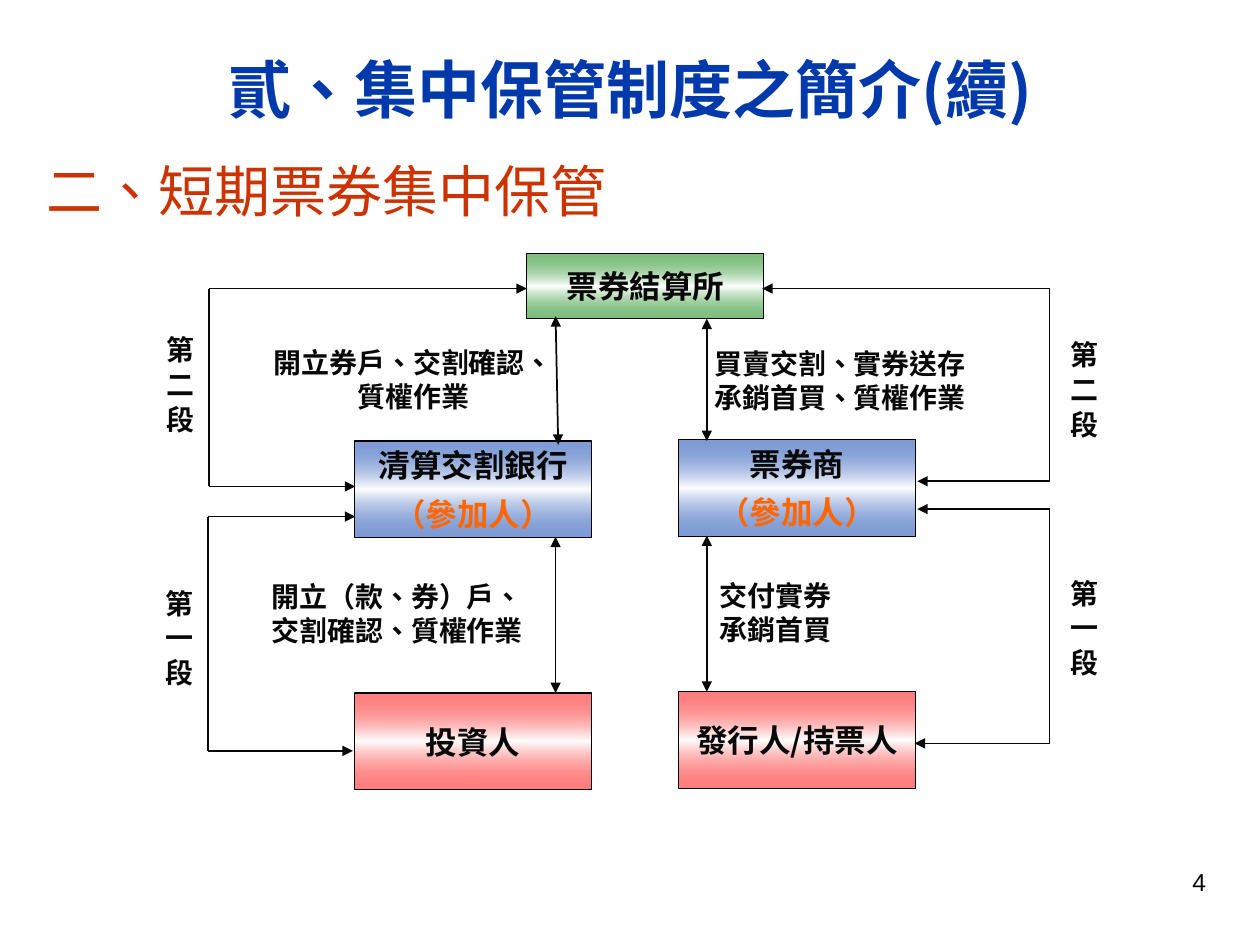
from lxml import etree
from pptx import Presentation
from pptx.dml.color import RGBColor
from pptx.enum.lang import MSO_LANGUAGE_ID
from pptx.enum.shapes import MSO_CONNECTOR, MSO_SHAPE
from pptx.enum.text import MSO_ANCHOR, PP_ALIGN
from pptx.oxml.ns import qn
from pptx.util import Pt

STRAIGHT, RECT = MSO_CONNECTOR.STRAIGHT, MSO_SHAPE.RECTANGLE
TOP, MIDDLE = MSO_ANCHOR.TOP, MSO_ANCHOR.MIDDLE
LEFT, CENTER, RIGHT = PP_ALIGN.LEFT, PP_ALIGN.CENTER, PP_ALIGN.RIGHT
JUSTIFY = PP_ALIGN.JUSTIFY
CHINESE = MSO_LANGUAGE_ID.TRADITIONAL_CHINESE

INK = RGBColor(0x08, 0x08, 0x08)
BLACK = RGBColor(0x00, 0x00, 0x00)
WHITE = RGBColor(0xFF, 0xFF, 0xFF)
BLUE = RGBColor(0x00, 0x39, 0xAC)
GREEN = RGBColor(0x00, 0x80, 0x00)
RED = RGBColor(0xFF, 0x00, 0x00)
RUST = RGBColor(0xCC, 0x33, 0x00)
ORANGE = RGBColor(0xFF, 0x66, 0x00)
NOTO, ARIAL, TIMES = "Noto Sans CJK SC", "Arial", "Times New Roman"

prs = Presentation()
prs.slide_width, prs.slide_height = Pt(720), Pt(540)
s = prs.slides.add_slide(prs.slide_layouts[6])


def write(p, text, size, font, color, bold, align):
    p.alignment = align
    r = p.add_run()
    r.text = text
    r.font.size, r.font.name, r.font.bold = Pt(size), font, bold
    r.font.color.rgb = color
    r.font.language_id = CHINESE
    etree.SubElement(r.font._element, qn("a:ea"), typeface=NOTO)


def add_line(x1, y1, x2, y2, *ends):
    """Draw a line; ends may hold "headEnd" (start) and "tailEnd" (finish)."""
    c = s.shapes.add_connector(STRAIGHT, Pt(x1), Pt(y1), Pt(x2), Pt(y2))
    c.line.color.rgb, c.line.width = INK, Pt(1)
    for end in ends:
        etree.SubElement(c.line._get_or_add_ln(), qn("a:" + end), type="triangle")
    etree.SubElement(c._element.spPr, qn("a:effectLst"))


# Headings, page number and notes beside the arrows
texts = [
    (516.2, 491.8, 180, 37.4, "4", 14, ARIAL, INK, False, RIGHT, TOP),
    (23.8, 18, 672.5, 64.8, "貳、集中保管制度之簡介(續)", 36, NOTO, BLUE, True, CENTER, MIDDLE),
    (19.4, 94.6, 391, 28, "二、短期票券集中保管", 32, ARIAL, RUST, False, JUSTIFY, MIDDLE),
    (146.2, 193, 180, 47.5, "開立券戶、交割確認、質權作業", 16, NOTO, INK, True, CENTER, MIDDLE),
    (148.2, 326.9, 164.2, 47.5, "開立（款、券）戶、交割確認、質權作業", 16, NOTO, INK, True, LEFT, MIDDLE),
    (401.2, 193.7, 164.9, 47.5, "買賣交割、實券送存承銷首買、質權作業", 16, NOTO, INK, True, LEFT, MIDDLE),
    (404, 326.2, 90.7, 47.5, "交付實券承銷首買", 16, NOTO, INK, True, LEFT, MIDDLE),
]
for x, y, w, h, text, size, font, color, bold, align, anchor in texts:
    tf = s.shapes.add_textbox(Pt(x), Pt(y), Pt(w), Pt(h)).text_frame
    tf.word_wrap, tf.vertical_anchor = True, anchor
    write(tf.paragraphs[0], text, size, font, color, bold, align)

# Organisations
LEFT_X, RIGHT_X, BOX_W, BOX_H = 202.7, 387.7, 135.4, 55.4
boxes = [
    (301, 144.7, 37.4, GREEN, "票券結算所", False),
    (LEFT_X, 252, BOX_H, BLUE, "清算交割銀行", True),
    (RIGHT_X, 251.3, BOX_H, BLUE, "票券商", True),
    (LEFT_X, 396, BOX_H, RED, "投資人", False),
    (RIGHT_X, 395.3, BOX_H, RED, "發行人/持票人", False),
]
for x, y, h, color, name, participant in boxes:
    sp = s.shapes.add_shape(RECT, Pt(x), Pt(y), Pt(BOX_W), Pt(h))
    sp.shadow.inherit = False
    sp.line.color.rgb, sp.line.width = BLACK, Pt(0.75)
    sp.fill.gradient()
    sp.fill.gradient_angle = 270
    stops = sp._element.spPr.find(".//" + qn("a:gsLst"))
    for old in list(stops):
        stops.remove(old)
    for pos, tone in ((0, color), (50, WHITE), (100, color)):
        stop = etree.SubElement(stops, qn("a:gs"), pos=str(pos * 1000))
        rgb = etree.SubElement(stop, qn("a:srgbClr"), val=str(tone))
        if tone != WHITE:
            etree.SubElement(rgb, qn("a:alpha"), val="50000")
    tf = sp.text_frame
    tf.word_wrap, tf.vertical_anchor = True, MIDDLE
    write(tf.paragraphs[0], name, 18, NOTO, INK, True, CENTER)
    if participant:
        p = tf.add_paragraph()
        p.space_before = Pt(6)
        write(p, "（參加人）", 18, TIMES, ORANGE, True, CENTER)

# Two-way arrows between the levels
for x1, y1, x2, y2 in [
    (317.5, 180.7, 319, 254.2),
    (403.9, 182.2, 403.9, 252),
    (317.5, 306.7, 317.5, 396),
    (403.9, 306, 403.9, 395.3),
]:
    add_line(x1, y1, x2, y2, "headEnd", "tailEnd")

# Brackets: upright, then the arrows leaving its two ends
brackets = [
    (119.5, 164.9, 301, 278, 203),
    (119, 295.2, 203, 429.1, 201.6),
    (599.8, 164.9, 435.6, 275, 524.2),
    (599.8, 290.9, 524.2, 424.8, 522.7),
]
for x, top, top_end, bottom, bottom_end in brackets:
    add_line(x, top, x, bottom)
    add_line(x, top, top_end, top, "tailEnd")
    add_line(x, bottom, bottom_end, bottom, "tailEnd")

# Stage labels, written downwards
for x, y, label in [
    (80.6, 329.8, "第 一 段"),
    (81.4, 185, "第 二 段"),
    (597.6, 324, "第 一 段"),
    (597.6, 187.9, "第 二 段"),
]:
    tf = s.shapes.add_textbox(Pt(x), Pt(y), Pt(40.3), Pt(77)).text_frame
    tf.word_wrap = False
    tf._txBody.bodyPr.set("vert", "eaVert")
    p = tf.paragraphs[0]
    p.line_spacing = 1.3
    write(p, label, 16, TIMES, INK, True, LEFT)

prs.save("out.pptx")
